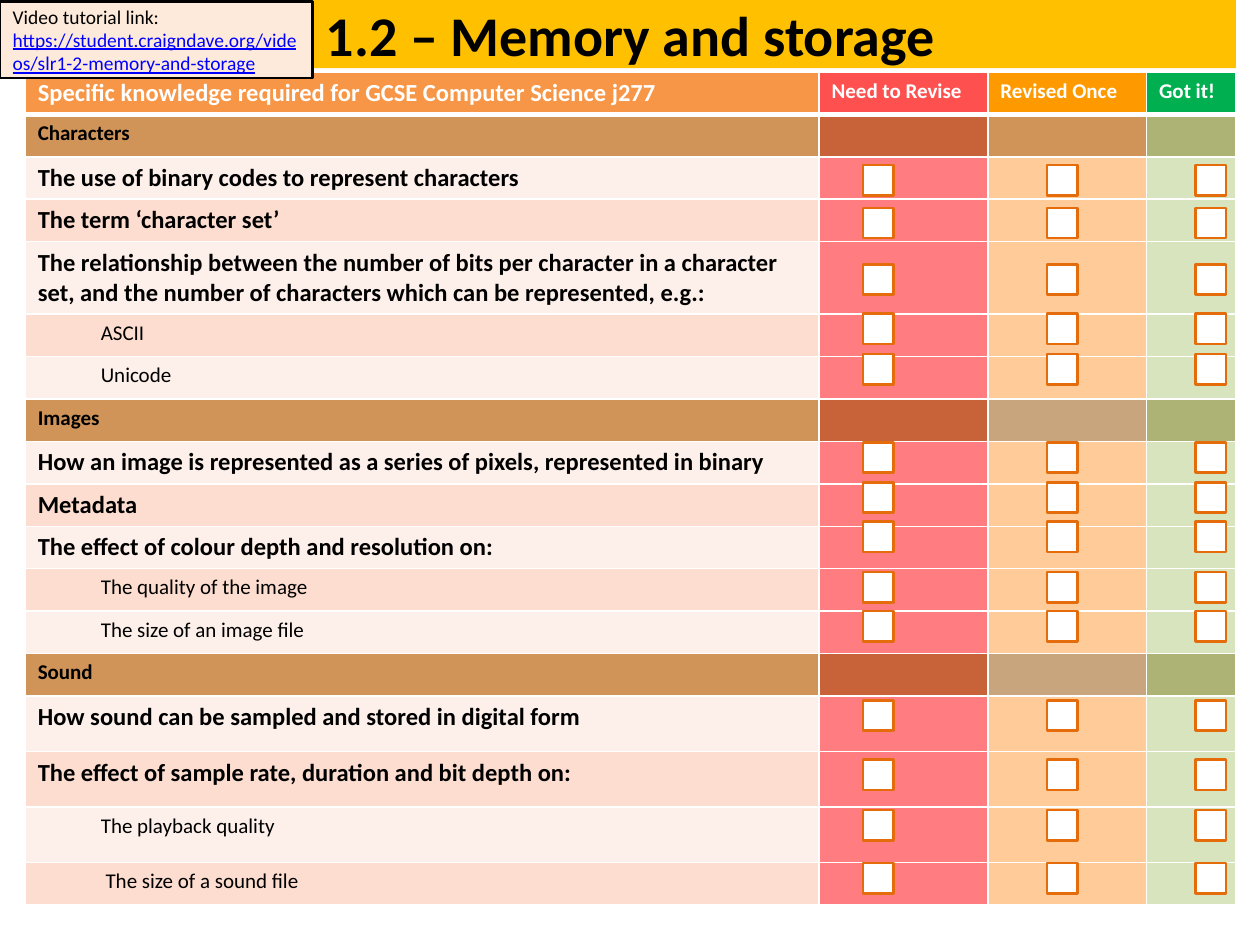
from lxml import etree
from pptx import Presentation
from pptx.dml.color import RGBColor
from pptx.enum import shapes, text
from pptx.oxml.ns import qn
from pptx.util import Inches, Pt

FONT = "Calibri"
COLUMN_WIDTHS = [6.3, 1.34, 1.26, 0.71]
ROW_HEIGHT = 0.33
HEADERS = [
    ("Specific knowledge required for GCSE Computer Science j277", 14, "F79646"),
    ("Need to Revise", 12, "FF5050"),
    ("Revised Once", 12, "FF9900"),
    ("Got it!", 12, "00B050"),
]
STATUS_FILLS = ["FF7C80", "FFCC99", "D7E4BD"]
BAND_FILLS = ["FDEFE9", "FCDDCF"]
CHECKBOX_LEFTS = [6.85, 8.31, 9.49]
CHECKBOX_SIZE = 0.24

# Kind, wording, row height, top of the row's checkboxes
TOPICS = [
    ("section", "Characters", ROW_HEIGHT, None),
    ("topic", "The use of binary codes to represent characters", ROW_HEIGHT, 1.31),
    ("topic", "The term ‘character set’", ROW_HEIGHT, 1.65),
    ("topic", "The relationship between the number of bits per character in a character "
              "set, and the number of characters which can be represented, e.g.:", 0.5, 2.1),
    ("detail", "ASCII", ROW_HEIGHT, 2.49),
    ("detail", "Unicode", ROW_HEIGHT, 2.81),
    ("section", "Images", ROW_HEIGHT, None),
    ("topic", "How an image is represented as a series of pixels, represented in binary",
     ROW_HEIGHT, 3.51),
    ("topic", "Metadata", ROW_HEIGHT, 3.83),
    ("topic", "The effect of colour depth and resolution on:", ROW_HEIGHT, 4.14),
    ("detail", "The quality of the image", ROW_HEIGHT, 4.54),
    ("detail", "The size of an image file", ROW_HEIGHT, 4.85),
    ("section", "Sound", ROW_HEIGHT, None),
    ("topic", "How sound can be sampled and stored in digital form", 0.44, 5.56),
    ("topic", "The effect of sample rate, duration and bit depth on:", 0.44, 6.03),
    ("detail", "The playback quality", 0.44, 6.43),
    ("detail", " The size of a sound file", ROW_HEIGHT, 6.85),
]


def paint(target, color):
    """Give a fill or a line's fill one solid colour."""
    target.solid()
    target.fore_color.rgb = RGBColor.from_string(color)


def place(shape, left, top, width, height):
    shape.left, shape.top = Inches(left), Inches(top)
    shape.width, shape.height = Inches(width), Inches(height)


def add_run(paragraph, wording, size, color="000000", bold=False, underline=None):
    run = paragraph.add_run()
    run.text = wording
    run.font.name = FONT
    run.font.size = Pt(size)
    run.font.bold = bold
    run.font.underline = underline
    paint(run.font.fill, color)


def fill_title(title):
    place(title, 0.2, 0, 9.61, 0.54)
    paint(title.fill, "FFC000")
    title.text_frame.auto_size = text.MSO_AUTO_SIZE.NONE
    title.text_frame.vertical_anchor = text.MSO_ANCHOR.MIDDLE
    heading = title.text_frame.paragraphs[0]
    heading.alignment = text.PP_ALIGN.CENTER
    add_run(heading, "1.2 – Memory and storage", 32, bold=True)


def add_borders(cell, bottom_width):
    properties = cell._tc.get_or_add_tcPr()
    for side, width in (("L", 1), ("R", 1), ("T", 1), ("B", bottom_width)):
        border = etree.SubElement(properties, qn(f"a:ln{side}"), w=str(Pt(width)))
        solid = etree.SubElement(border, qn("a:solidFill"))
        etree.SubElement(solid, qn("a:srgbClr"), val="FFFFFF")


def style_cell(cell, fill, bottom_width=1):
    add_borders(cell, bottom_width)
    paint(cell.fill, fill)


def fill_topic_row(table, row, kind, wording):
    if kind == "section":
        middle = "D09458" if wording == "Characters" else "C9A57D"
        fills = ["D09458", "C76239", middle, "ADB375"]
    else:
        fills = [BAND_FILLS[row % 2]] + STATUS_FILLS
    for column, fill in enumerate(fills):
        cell = table.cell(row, column)
        style_cell(cell, fill)
        if column:
            # An empty cell's text size limits how low its row can be
            etree.SubElement(cell.text_frame.paragraphs[0]._p,
                             qn("a:endParaRPr"), sz="1400")
    paragraph = table.cell(row, 0).text_frame.paragraphs[0]
    if kind == "detail":
        paragraph.level = 1
        paragraph._p.get_or_add_pPr().set("marL", str(Inches(0.5)))
    add_run(paragraph, wording, 14 if kind == "topic" else 12, bold=kind != "detail")


def add_checklist(slide):
    heights = [ROW_HEIGHT] + [height for _, _, height, _ in TOPICS]
    table = slide.shapes.add_table(
        len(heights), len(COLUMN_WIDTHS), Inches(0.2), Inches(0.57),
        Inches(sum(COLUMN_WIDTHS)), Inches(sum(heights))).table
    table.horz_banding = False
    for column, width in zip(table.columns, COLUMN_WIDTHS):
        column.width = Inches(width)
    for row, height in zip(table.rows, heights):
        row.height = Inches(height)
    for column, (wording, size, fill) in enumerate(HEADERS):
        cell = table.cell(0, column)
        style_cell(cell, fill, bottom_width=3)
        add_run(cell.text_frame.paragraphs[0], wording, size, "FFFFFF", bold=True)
    for row, (kind, wording, _, _) in enumerate(TOPICS, start=1):
        fill_topic_row(table, row, kind, wording)


def add_checkbox(slide, left, top):
    box = slide.shapes.add_shape(
        shapes.MSO_SHAPE.RECTANGLE, Inches(left), Inches(top),
        Inches(CHECKBOX_SIZE), Inches(CHECKBOX_SIZE))
    box.shadow.inherit = False
    paint(box.fill, "FFFFFF")
    paint(box.line.fill, "E46C0A")
    box.line.width = Pt(1.5)


def fill_video_link(slide, link_box):
    place(link_box, 0, 0.01, 2.48, 0.61)
    paint(link_box.fill, "FDEADA")
    paint(link_box.line.fill, "000000")
    link_box.line.width = Pt(1.5)
    frame = link_box.text_frame
    frame.word_wrap = True
    frame.auto_size = text.MSO_AUTO_SIZE.NONE
    frame.vertical_anchor = text.MSO_ANCHOR.MIDDLE
    paragraph = frame.paragraphs[0]
    paragraph.space_before = Pt(0)
    properties = paragraph._p.get_or_add_pPr()
    properties.set("marL", "0")
    properties.set("indent", "0")
    etree.SubElement(properties, qn("a:buNone"))
    add_run(paragraph, "Video tutorial link: ", 11.1)
    add_run(paragraph, "https://student.craigndave.org/videos/slr1-2-memory-and-storage",
            11.1, "0000FF", underline=True)
    # The link box lies in front of the title and the table
    slide.shapes._spTree.append(link_box._element)


def main():
    presentation = Presentation()
    presentation.slide_width, presentation.slide_height = Inches(10), Inches(7.5)
    slide = presentation.slides.add_slide(presentation.slide_layouts[1])
    fill_title(slide.shapes.title)
    add_checklist(slide)
    for _, _, _, top in TOPICS:
        if top is not None:
            for left in CHECKBOX_LEFTS:
                add_checkbox(slide, left, top)
    fill_video_link(slide, slide.placeholders[1])
    presentation.save("out.pptx")


if __name__ == "__main__":
    main()
